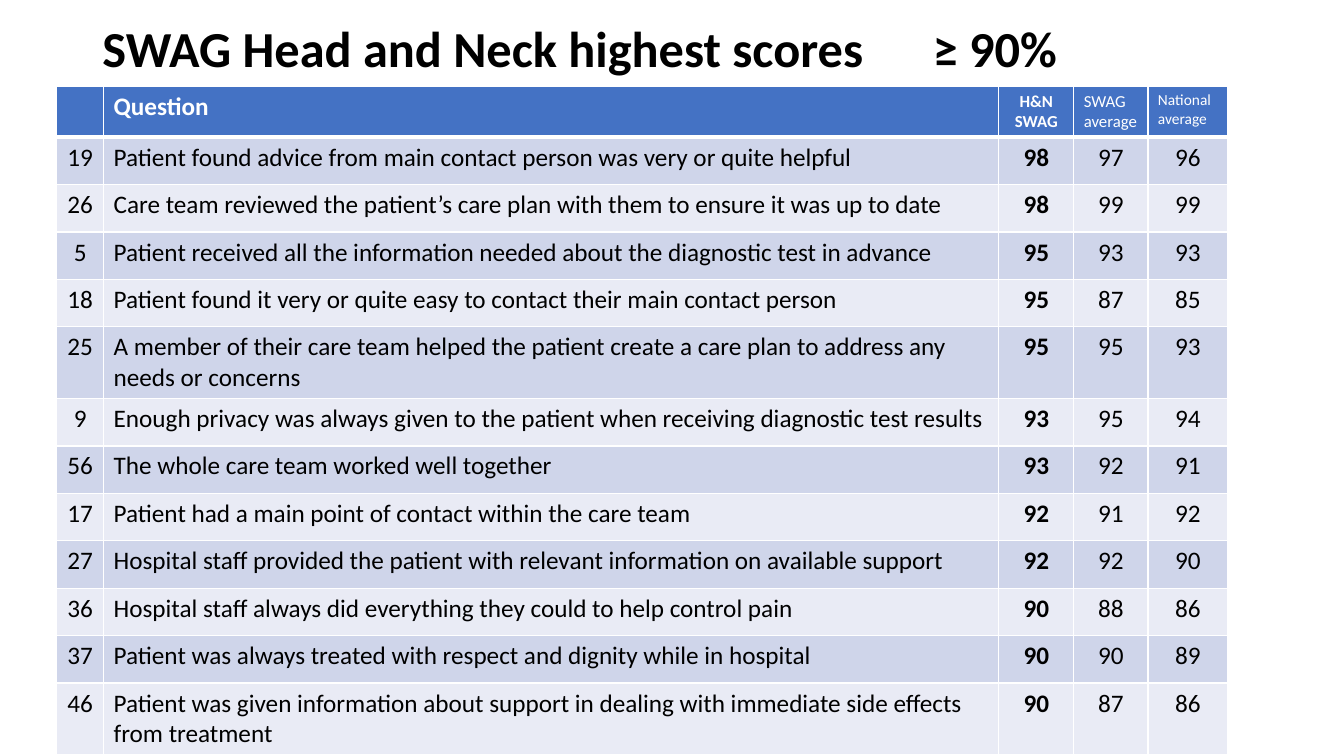
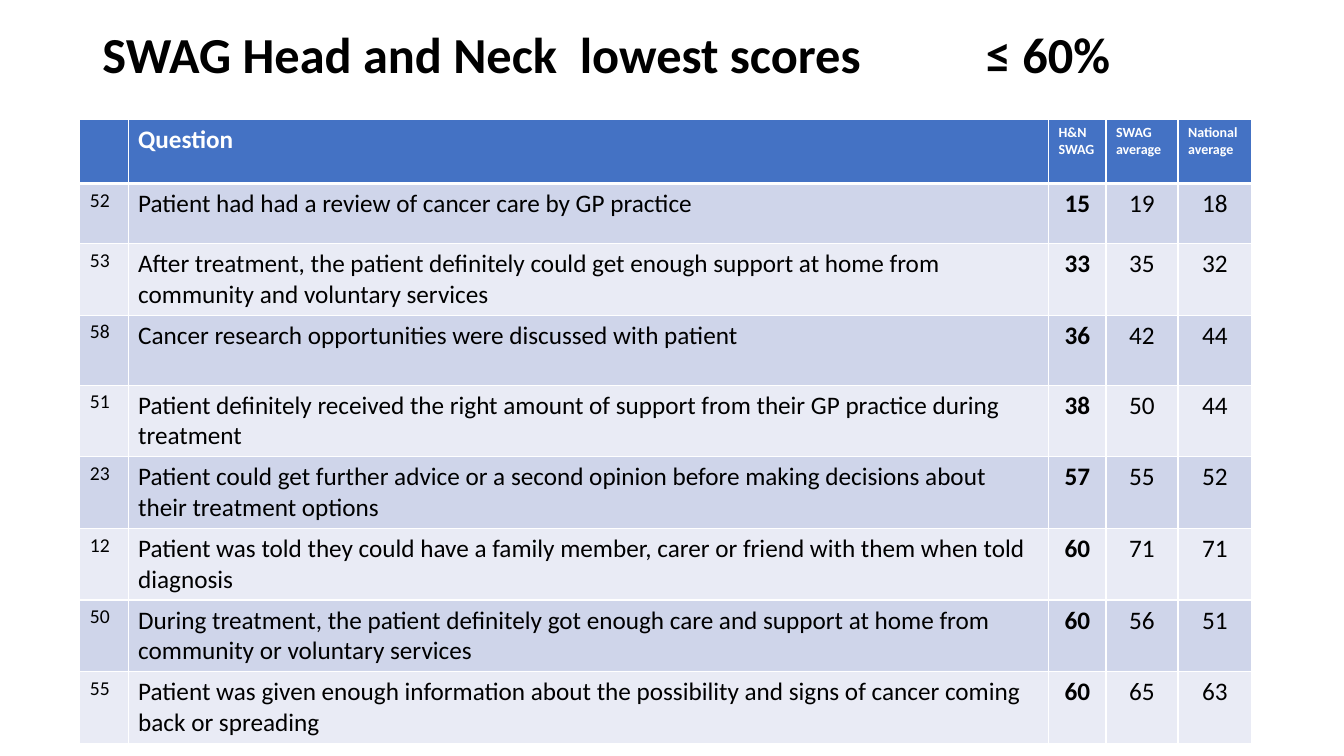
import pptx
import pptx.dml.color
import pptx.enum.text
import pptx.oxml
import pptx.oxml.ns
import pptx.util

Pt = pptx.util.Pt
LEFT = pptx.enum.text.PP_ALIGN.LEFT
CENTER = pptx.enum.text.PP_ALIGN.CENTER
FONT = "Calibri"
COLORS = {
    "text": "000000",
    "header": "4472C4",
    "band_dark": "CFD5EA",
    "band_light": "E9EBF5",
    "white": "FFFFFF",
}
TITLE_FORMAT = {"size": 36, "bold": True, "color": "text", "alignment": LEFT}
QUESTION_HEADER = {"size": 18, "bold": True, "alignment": LEFT}
SCORE_FORMATS = [
    {"size": 18, "bold": False, "alignment": LEFT},
    {"size": 18, "bold": True, "alignment": CENTER},
    {"size": 18, "bold": False, "alignment": CENTER},
    {"size": 18, "bold": False, "alignment": CENTER},
]
HEADINGS = ["", "Question", "H&N SWAG", "SWAG average", "National average"]

HIGHEST = {
    "title": "SWAG Head and Neck highest scores\t≥ 90%",
    "title_box": (66, 11.5, 828, 50),
    "tab_stop": 593,
    "table_box": (40.5, 61.5, 836.5, 474.5),
    "columns": [33.5, 639.5, 53.5, 53, 57],
    "heights": [33] + [33.9] * 12,
    "header_formats": [
        QUESTION_HEADER,
        QUESTION_HEADER,
        {"size": 12, "bold": True, "alignment": CENTER},
        {"size": 12, "bold": False, "alignment": LEFT},
        {"size": 11, "bold": False, "alignment": LEFT},
    ],
    "number_format": {"size": 18, "bold": False, "alignment": CENTER},
    "rows": [
        (19, "Patient found advice from main contact person was very or quite helpful", 98, 97, 96),
        (26, "Care team reviewed the patient’s care plan with them to ensure it was up to date", 98, 99, 99),
        (5, "Patient received all the information needed about the diagnostic test in advance", 95, 93, 93),
        (18, "Patient found it very or quite easy to contact their main contact person", 95, 87, 85),
        (25, "A member of their care team helped the patient create a care plan to address any "
             "needs or concerns", 95, 95, 93),
        (9, "Enough privacy was always given to the patient when receiving diagnostic test results", 93, 95, 94),
        (56, "The whole care team worked well together", 93, 92, 91),
        (17, "Patient had a main point of contact within the care team", 92, 91, 92),
        (27, "Hospital staff provided the patient with relevant information on available support", 92, 92, 90),
        (36, "Hospital staff always did everything they could to help control pain", 90, 88, 86),
        (37, "Patient was always treated with respect and dignity while in hospital", 90, 90, 89),
        (46, "Patient was given information about support in dealing with immediate side effects "
             "from treatment", 90, 87, 86),
    ],
}

LOWEST = {
    "title": "SWAG Head and Neck  lowest scores\t≤ 60%",
    "title_box": (66, 13, 828, 56),
    "tab_stop": 631,
    "table_box": (57, 85, 837, 442),
    "columns": [34.5, 657.5, 41, 51.5, 52.5],
    "heights": [46, 43, 43, 50, 50, 50, 43, 43, 43],
    "header_formats": [QUESTION_HEADER] * 2 + [{"size": 10, "bold": True, "alignment": LEFT}] * 3,
    "number_format": {"size": 14, "bold": False, "alignment": LEFT},
    "rows": [
        (52, "Patient had had a review of cancer care by GP practice", 15, 19, 18),
        (53, "After treatment, the patient definitely could get enough support at home from "
             "community and voluntary services", 33, 35, 32),
        (58, "Cancer research opportunities were discussed with patient", 36, 42, 44),
        (51, "Patient definitely received the right amount of support from their GP practice during "
             "treatment", 38, 50, 44),
        (23, "Patient could get further advice or a second opinion before making decisions about "
             "their treatment options", 57, 55, 52),
        (12, "Patient was told they could have a family member, carer or friend with them when told "
             "diagnosis", 60, 71, 71),
        (50, "During treatment, the patient definitely got enough care and support at home from "
             "community or voluntary services", 60, 56, 51),
        (55, "Patient was given enough information about the possibility and signs of cancer coming "
             "back or spreading", 60, 65, 63),
    ],
}


def rgb(name):
    return pptx.dml.color.RGBColor.from_string(COLORS[name])


def format_text(paragraph, text, size, bold, alignment, color):
    paragraph.alignment = alignment
    run = paragraph.add_run()
    run.text = text
    for name, value in {"name": FONT, "size": Pt(size), "bold": bold}.items():
        setattr(run.font, name, value)
    run.font.color.rgb = rgb(color)


def add_title(slide, text, box, tab_stop):
    title = slide.shapes.title
    for name, value in zip(("left", "top", "width", "height"), box):
        setattr(title, name, Pt(value))
    frame_format = {
        "vertical_anchor": pptx.enum.text.MSO_ANCHOR.MIDDLE,
        "auto_size": pptx.enum.text.MSO_AUTO_SIZE.NONE,
        "word_wrap": True,
    }
    for name, value in frame_format.items():
        setattr(title.text_frame, name, value)
    paragraph = title.text_frame.paragraphs[0]
    paragraph.line_spacing = 0.9
    format_text(paragraph, text, **TITLE_FORMAT)
    namespace = pptx.oxml.ns.nsdecls("a")
    tabs = f'<a:tabLst {namespace}><a:tab pos="{Pt(tab_stop)}" algn="l"/></a:tabLst>'
    paragraph._p.get_or_add_pPr().append(pptx.oxml.parse_xml(tabs))


def set_borders(cell, widths):
    namespace = pptx.oxml.ns.nsdecls("a")
    properties = cell._tc.get_or_add_tcPr()
    for side, width in widths.items():
        properties.append(pptx.oxml.parse_xml(
            f'<a:ln{side} {namespace} w="{Pt(width)}"><a:solidFill>'
            f'<a:srgbClr val="{COLORS["white"]}"/></a:solidFill></a:ln{side}>'))


def fill_cell(cell, text, row_index, text_format):
    header = row_index == 0
    set_borders(cell, {"L": 1, "R": 1, "T": 3 if row_index == 1 else 1, "B": 3 if header else 1})
    cell.fill.solid()
    band = "band_dark" if row_index % 2 else "band_light"
    cell.fill.fore_color.rgb = rgb("header" if header else band)
    if text:
        color = "white" if header else "text"
        format_text(cell.text_frame.paragraphs[0], text, color=color, **text_format)


def add_score_table(slide, content):
    rows = [HEADINGS] + content["rows"]
    box = [Pt(value) for value in content["table_box"]]
    table = slide.shapes.add_table(len(rows), len(HEADINGS), *box).table
    for column, width in zip(table.columns, content["columns"]):
        column.width = Pt(width)
    body_formats = [content["number_format"]] + SCORE_FORMATS
    for row_index, values in enumerate(rows):
        table.rows[row_index].height = Pt(content["heights"][row_index])
        formats = body_formats if row_index else content["header_formats"]
        for column_index, value in enumerate(values):
            fill_cell(table.cell(row_index, column_index), str(value), row_index, formats[column_index])


def add_score_slide(presentation, content):
    slide = presentation.slides.add_slide(presentation.slide_layouts.get_by_name("Title Only"))
    add_title(slide, content["title"], content["title_box"], content["tab_stop"])
    add_score_table(slide, content)


def main():
    presentation = pptx.Presentation()
    presentation.slide_width = Pt(960)
    presentation.slide_height = Pt(540)
    for content in (HIGHEST, LOWEST):
        add_score_slide(presentation, content)
    presentation.save("out.pptx")


if __name__ == "__main__":
    main()
